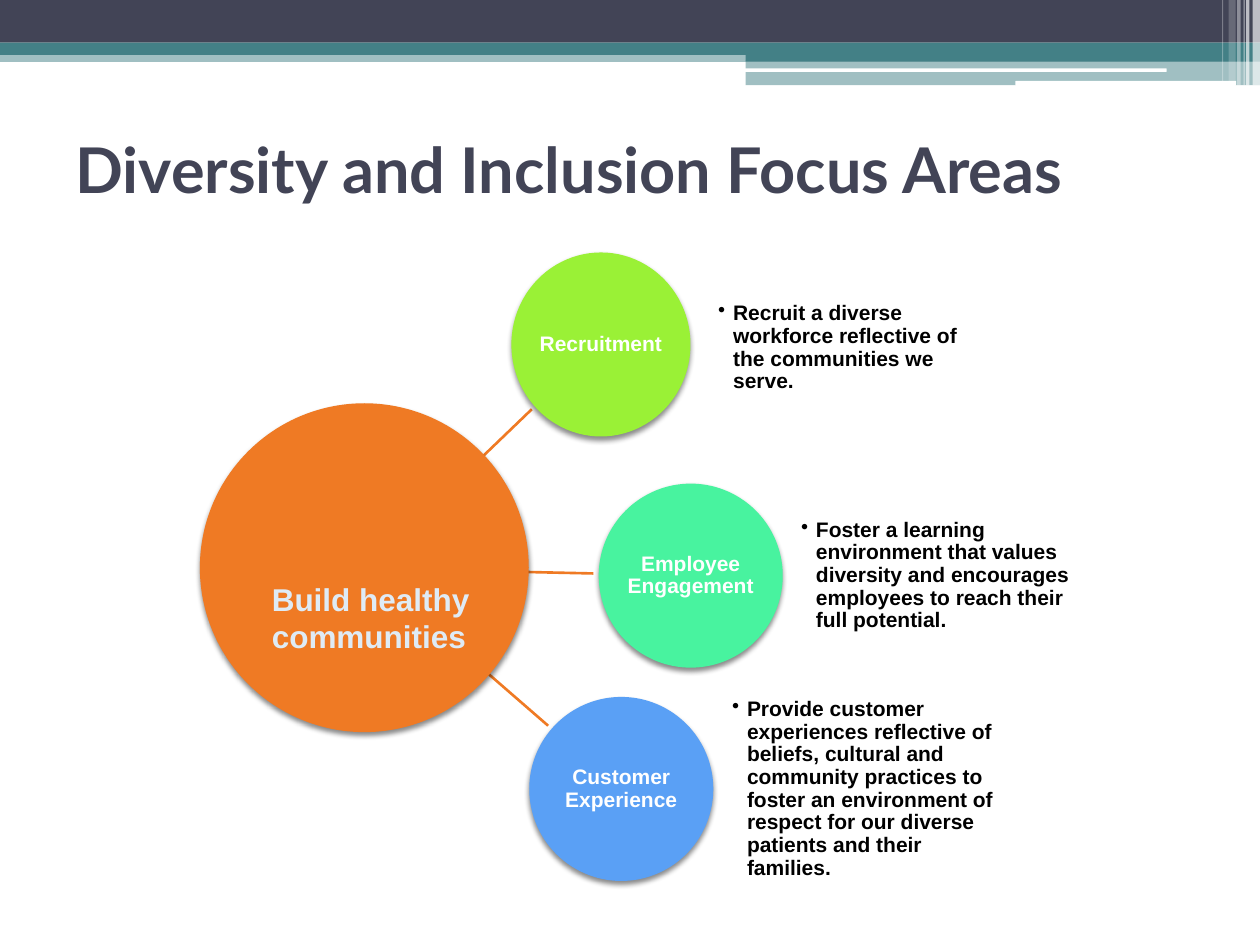
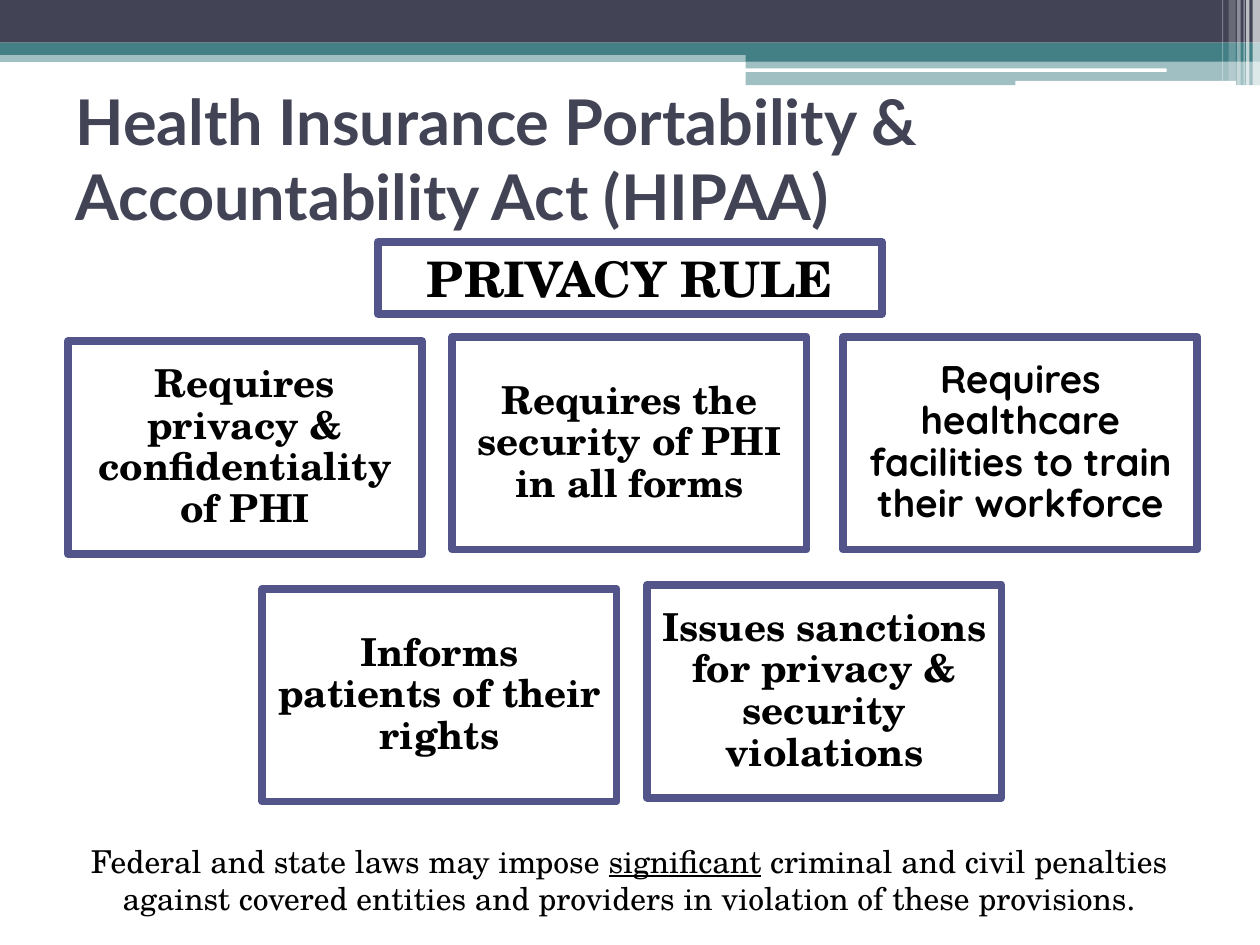
from dataclasses import dataclass

from lxml.etree import SubElement
from pptx import Presentation
from pptx.dml.color import RGBColor
from pptx.enum.shapes import MSO_CONNECTOR, MSO_SHAPE
from pptx.enum.text import MSO_ANCHOR, MSO_AUTO_SIZE, PP_ALIGN
from pptx.oxml.ns import qn
from pptx.util import Cm, Pt


@dataclass(frozen=True)
class Theme:
    navy: str = "424456"
    teal: str = "438086"
    white: str = "FFFFFF"
    black: str = "000000"
    orange: str = "EF7A24"
    lime: str = "9AF136"
    mint: str = "48F39F"
    blue: str = "5AA0F5"
    pale: str = "DFEBF5"
    violet: str = "53548A"
    title_face: str = "Lato"
    diagram_face: str = "Arial"
    rule_face: str = "TeX Gyre Schola"
    training_face: str = "Quicksand"
    title_size: int = 36
    heading_size: int = 28
    rule_size: int = 22
    body_size: int = 18
    label_size: int = 12


theme = Theme()


def add_block(page, kind, place, fill, opacity=100, border=None, shadow=False):
    shape = page.shapes.add_shape(kind, *[Cm(length) for length in place])
    shape.shadow.inherit = False
    shape.fill.solid()
    shape.fill.fore_color.rgb = RGBColor.from_string(fill)
    properties = shape.element.spPr
    if opacity < 100:
        color = properties.find(".//" + qn("a:srgbClr"))
        SubElement(color, qn("a:alpha"), val=str(opacity * 1000))
    if border:
        shape.line.color.rgb = RGBColor.from_string(border)
        shape.line.width = Pt(4.5)
    else:
        shape.line.fill.background()
    if shadow:
        effect = SubElement(properties.find(qn("a:effectLst")), qn("a:outerShdw"),
                            blurRad=str(Pt(3)), dist=str(Pt(2)), dir="5400000",
                            rotWithShape="0")
        color = SubElement(effect, qn("a:srgbClr"), val=theme.black)
        SubElement(color, qn("a:alpha"), val="45000")
    return shape


def write(box, paragraphs, face, size, color, bold=True, align=PP_ALIGN.CENTER,
          anchor=MSO_ANCHOR.MIDDLE, inset=None, spacing=None, bullet=False,
          wrap=True):
    frame = box.text_frame
    frame.word_wrap = wrap
    frame.auto_size = MSO_AUTO_SIZE.NONE
    frame.vertical_anchor = anchor
    if inset is not None:
        frame.margin_left = frame.margin_right = Cm(inset)
        frame.margin_top = frame.margin_bottom = Cm(inset)
    for index, spans in enumerate(paragraphs):
        para = frame.add_paragraph() if index else frame.paragraphs[0]
        para.alignment = align
        if spacing:
            para.line_spacing = spacing
        if bullet:
            properties = para._p.get_or_add_pPr()
            properties.set("marL", str(Cm(0.3)))
            properties.set("indent", str(Cm(-0.3)))
            SubElement(properties, qn("a:buChar"), char="•")
        for text, underlined in spans:
            span = para.add_run()
            span.text = text
            span.font.name = face
            span.font.size = Pt(size)
            span.font.bold = bold
            span.font.underline = underlined
            span.font.color.rgb = RGBColor.from_string(color)


deck = Presentation()
deck.slide_width, deck.slide_height = Cm(25.4), Cm(19.05)
layout = deck.slide_layouts[5]
for placeholder in list(layout.placeholders)[1:]:
    layout.shapes.element.remove(placeholder.element)

titles = [
    ("Diversity and Inclusion Focus Areas", 1.9),
    ("Health Insurance Portability & Accountability Act (HIPAA)", 1.7),
]
pages = []
for text, top in titles:
    page = deck.slides.add_slide(layout)
    title = page.shapes.title
    title.left, title.top, title.width, title.height = Cm(1.27), Cm(top), Cm(22.86), Cm(2.97)
    write(title, [[(text, False)]], theme.title_face, theme.title_size, theme.navy,
          align=PP_ALIGN.LEFT)
    pages.append(page)
focus_page, privacy_page = pages

bands = [
    (MSO_SHAPE.RECTANGLE, (0, 1.02, 25.4, 0.23), theme.teal, 50),
    (MSO_SHAPE.RECTANGLE, (0, 0, 25.4, 0.86), theme.navy, 100),
    (MSO_SHAPE.RECTANGLE, (0, 0.86, 25.4, 0.25), theme.teal, 100),
    (MSO_SHAPE.RECTANGLE, (15.03, 0.99, 10.37, 0.25), theme.teal, 100),
    (MSO_SHAPE.RECTANGLE, (15.03, 1.22, 10.37, 0.5), theme.teal, 50),
    (MSO_SHAPE.ROUNDED_RECTANGLE, (15.01, 1.38, 8.51, 0.07), theme.white, 100),
    (MSO_SHAPE.ROUNDED_RECTANGLE, (20.47, 1.63, 4.45, 0.1), theme.white, 100),
]
stripes = [
    (25.25, 0.15, 1.73, 65), (25.12, 0.07, 1.73, 65), (25.07, 0.02, 1.73, 60),
    (24.94, 0.07, 1.73, 40), (24.77, 0.14, 1.63, 20), (24.64, 0.02, 1.63, 30),
]
for left, width, height, opacity in stripes:
    bands.append((MSO_SHAPE.RECTANGLE, (left, 0, width, height), theme.white, opacity))
for kind, place, fill, opacity in bands:
    band = add_block(focus_page, kind, place, fill, opacity)
    layout.shapes.element.append(band.element)

spokes = [
    (9.68, 13.44, 11.05, 14.63),
    (9.68, 11.51, 11.96, 11.56),
    (9.68, 9.25, 10.72, 8.25),
]
for ends in spokes:
    spoke = focus_page.shapes.add_connector(
        MSO_CONNECTOR.STRAIGHT, *[Cm(length) for length in ends])
    spoke.line.color.rgb = RGBColor.from_string(theme.orange)
    spoke.line.width = Pt(1.5)
    SubElement(spoke.element.spPr, qn("a:effectLst"))

add_block(focus_page, MSO_SHAPE.OVAL, (4.03, 8.13, 6.63, 6.63), theme.orange, shadow=True)
focus_areas = [
    ("Recruitment", (10.31, 5.09, 3.61, 3.71), theme.lime, (14.48, 5.16, 5.41),
     "Recruit a diverse workforce reflective of the communities we serve."),
    ("Employee Engagement", (12.07, 9.75, 3.71, 3.71), theme.mint, (16.15, 9.75, 5.56),
     "Foster a learning environment that values diversity and encourages employees "
     "to reach their full potential."),
    ("Customer Experience", (10.67, 14.05, 3.71, 3.71), theme.blue, (14.76, 14.05, 5.56),
     "Provide customer experiences reflective of beliefs, cultural and community "
     "practices to foster an environment of respect for our diverse patients and "
     "their families."),
]
for label, circle_place, fill, (left, top, width), goal in focus_areas:
    circle = add_block(focus_page, MSO_SHAPE.OVAL, circle_place, fill, shadow=True)
    write(circle, [[(label, False)]], theme.diagram_face, theme.label_size, theme.white,
          inset=0, spacing=0.9)
    box = focus_page.shapes.add_textbox(Cm(left), Cm(top), Cm(width), Cm(3.71))
    write(box, [[(goal, False)]], theme.diagram_face, theme.label_size, theme.black,
          align=PP_ALIGN.LEFT, inset=0, spacing=0.9, bullet=True)

mission = focus_page.shapes.add_textbox(Cm(5.23), Cm(11.56), Cm(4.72), Cm(1.8))
write(mission, [[("Build healthy", False)], [("communities", False)]],
      theme.diagram_face, theme.body_size, theme.pale, align=PP_ALIGN.LEFT,
      anchor=MSO_ANCHOR.TOP, wrap=False)

rules = [
    ("Requires privacy & confidentiality of PHI", 1.37, 6.88, theme.rule_face),
    ("Requires the security of PHI in all forms", 9.12, 6.79, theme.rule_face),
    ("Requires healthcare facilities to train their workforce", 17.0, 6.79,
     theme.training_face),
    ("Informs patients of their rights", 5.29, 11.87, theme.rule_face),
    ("Issues sanctions for privacy & security violations", 13.05, 11.79, theme.rule_face),
]
for text, left, top, face in rules:
    panel = add_block(privacy_page, MSO_SHAPE.RECTANGLE, (left, top, 7.14, 4.29),
                      theme.white, border=theme.violet)
    write(panel, [[(text, False)]], face, theme.rule_size, theme.black,
          inset=0.23, spacing=0.9)

heading = add_block(privacy_page, MSO_SHAPE.RECTANGLE, (7.62, 4.88, 10.16, 1.45),
                    theme.white, border=theme.violet)
write(heading, [[("PRIVACY RULE", False)]], theme.rule_face, theme.heading_size, theme.black)

penalties = privacy_page.shapes.add_textbox(Cm(1.14), Cm(16.84), Cm(23.09), Cm(1.8))
write(penalties, [[
    ("Federal and state laws may impose ", False),
    ("significant", True),
    (" criminal and civil penalties against covered entities and providers in "
     "violation of these provisions.", False),
]], theme.rule_face, theme.body_size, theme.black, bold=False, anchor=MSO_ANCHOR.TOP)

deck.save("out.pptx")
